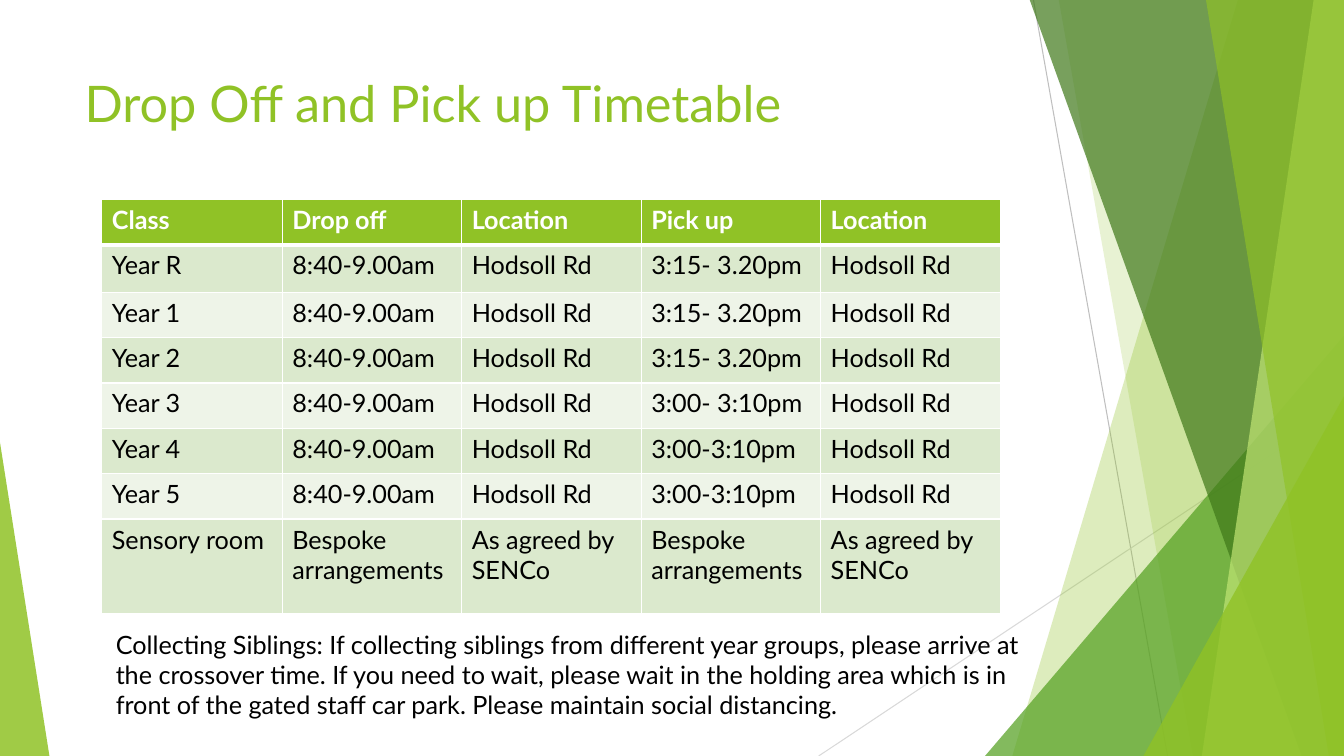
from lxml import etree
from pptx import Presentation
from pptx import util as u
from pptx.dml.color import RGBColor
from pptx.enum import shapes, text
from pptx.oxml import ns

LIME = RGBColor(0x90, 0xC2, 0x26)
GREEN = RGBColor(0x54, 0xA0, 0x21)
FOREST = RGBColor(0x3F, 0x78, 0x19)
PALE = RGBColor(0xC0, 0xE4, 0x74)
BAND = RGBColor(0xDB, 0xE9, 0xCD)
BAND_LIGHT = RGBColor(0xEE, 0xF4, 0xE8)
GREY = RGBColor(0xBF, 0xBF, 0xBF)
GREY_LIGHT = RGBColor(0xD9, 0xD9, 0xD9)
WHITE = RGBColor(0xFF, 0xFF, 0xFF)
BLACK = RGBColor(0x00, 0x00, 0x00)

PX = 9144
WIDTH, HEIGHT = 1333, 750
FONT = "Lato"

HEADER = ["Class", "Drop off", "Location", "Pick up", "Location"]
DROP_OFF, PLACE = "8:40-9.00am", "Hodsoll Rd"
PICK_UPS = [
    ("Year R", "3:15- 3.20pm"),
    ("Year 1", "3:15- 3.20pm"),
    ("Year 2", "3:15- 3.20pm"),
    ("Year 3", "3:00- 3:10pm"),
    ("Year 4", "3:00-3:10pm"),
    ("Year 5", "3:00-3:10pm"),
]
SENSORY = ["Sensory room"] + ["Bespoke arrangements", "As agreed by SENCo"] * 2
SIBLINGS = (
    "Collecting Siblings: If collecting siblings from different year groups, "
    "please arrive at the crossover time. If you need to wait, please wait in "
    "the holding area which is in front of the gated staff car park. "
    "Please maintain social distancing."
)


def write(tf, words, size=18, color=BLACK, bold=False):
    """Put one formatted run of words into a text frame."""
    tf.word_wrap = True
    r = tf.paragraphs[0].add_run()
    r.text = words
    r.font.name, r.font.size, r.font.bold = FONT, u.Pt(size), bold
    r.font.color.rgb = color


class Deck:
    """Holds the current slide and draws its elements in px."""

    def __init__(self):
        """Open a presentation with one blank slide."""
        self.prs = Presentation()
        self.prs.slide_width, self.prs.slide_height = WIDTH * PX, HEIGHT * PX
        self.s = self.prs.slides.add_slide(self.prs.slide_layouts[6])

    def line(self, x1, y1, x2, y2, color):
        """Draw a thin straight line."""
        ends = [v * PX for v in (x1, y1, x2, y2)]
        sp = self.s.shapes.add_connector(shapes.MSO_CONNECTOR.STRAIGHT, *ends)
        sp.line.color.rgb, sp.line.width = color, u.Pt(0.75)
        etree.SubElement(sp.element.spPr, ns.qn("a:effectLst"))

    def paint(self, sp, color, opacity):
        """Give a shape a translucent fill with no outline."""
        sp.shadow.inherit = False
        sp.line.fill.background()
        sp.fill.solid()
        sp.fill.fore_color.rgb = color
        clr = sp.element.spPr.find(".//" + ns.qn("a:srgbClr"))
        etree.SubElement(clr, ns.qn("a:alpha"), val=str(opacity * 1000))

    def ribbon(self, top, bottom, color, opacity):
        """Fill from a slanted edge to the right side of the slide."""
        fb = self.s.shapes.build_freeform(top, -1, scale=PX)
        fb.add_line_segments([(WIDTH, -1), (WIDTH, HEIGHT), (bottom, HEIGHT)])
        self.paint(fb.convert_to_shape(), color, opacity)

    def triangle(self, x, y, w, apex, color, opacity):
        """Draw a triangle that stands on the bottom of the slide."""
        sp = self.s.shapes.add_shape(
            shapes.MSO_SHAPE.ISOSCELES_TRIANGLE,
            x * PX, y * PX, w * PX, (HEIGHT - y) * PX)
        sp.adjustments[0] = apex
        self.paint(sp, color, opacity)

    def text(self, x, y, w, h, words, **fmt):
        """Add a wrapped text box."""
        sp = self.s.shapes.add_textbox(x * PX, y * PX, w * PX, h * PX)
        sp.text_frame.vertical_anchor = text.MSO_ANCHOR.TOP
        write(sp.text_frame, words, **fmt)

    def cell(self, cell, words, fill, top=1, bottom=1, **fmt):
        """Fill a table cell and draw its white borders."""
        write(cell.text_frame, words, **fmt)
        cell.fill.solid()
        cell.fill.fore_color.rgb = fill
        tcPr = cell._tc.get_or_add_tcPr()
        sides = {"lnL": 1, "lnR": 1, "lnT": top, "lnB": bottom}
        for i, (side, width) in enumerate(sides.items()):
            ln = etree.Element(ns.qn("a:" + side), w=str(u.Pt(width)))
            solid = etree.SubElement(ln, ns.qn("a:solidFill"))
            etree.SubElement(solid, ns.qn("a:srgbClr"), val=str(WHITE))
            tcPr.insert(i, ln)

    def table(self, x, y, widths, heights, rows):
        """Add a banded table with a header row."""
        frame = self.s.shapes.add_table(
            len(rows), len(widths), x * PX, y * PX,
            sum(widths) * PX, sum(heights) * PX)
        tbl = frame.table
        tbl.horz_banding = False
        for col, w in zip(tbl.columns, widths):
            col.width = w * PX
        for i, (row, h) in enumerate(zip(rows, heights)):
            tbl.rows[i].height = h * PX
            if i == 0:
                style = dict(fill=LIME, bottom=3, color=WHITE, bold=True)
            else:
                style = dict(fill=BAND if i % 2 else BAND_LIGHT,
                             top=3 if i == 1 else 1)
            for j, words in enumerate(row):
                self.cell(tbl.cell(i, j), words, **style)


def main():
    """Build the timetable slide."""
    deck = Deck()
    deck.line(1025, 0, 1158, HEIGHT, GREY)
    deck.line(WIDTH, 403, 812, HEIGHT, GREY_LIGHT)
    deck.ribbon(1228, 1004, LIME, 30)
    deck.ribbon(1050, 1183, LIME, 20)
    deck.triangle(977, 333, 356, 1, GREEN, 72)
    deck.ribbon(1021, 1291, FOREST, 70)
    deck.ribbon(1303, 1192, PALE, 70)
    deck.ribbon(1196, 1318, LIME, 65)
    deck.triangle(1134, 393, 199, 1, LIME, 80)
    deck.triangle(0, 439, 49, 0, LIME, 85)

    deck.text(74, 67, 940, 144, "Drop Off and Pick up Timetable",
              size=36, color=LIME)
    years = [[year, DROP_OFF, PLACE, pick_up, PLACE]
             for year, pick_up in PICK_UPS]
    deck.table(101, 198, [179] + [178] * 4, [45, 47] + [45] * 5 + [94],
               [HEADER] + years + [SENSORY])
    deck.text(105, 619, 957, 101, SIBLINGS)
    deck.prs.save("out.pptx")


if __name__ == "__main__":
    main()
